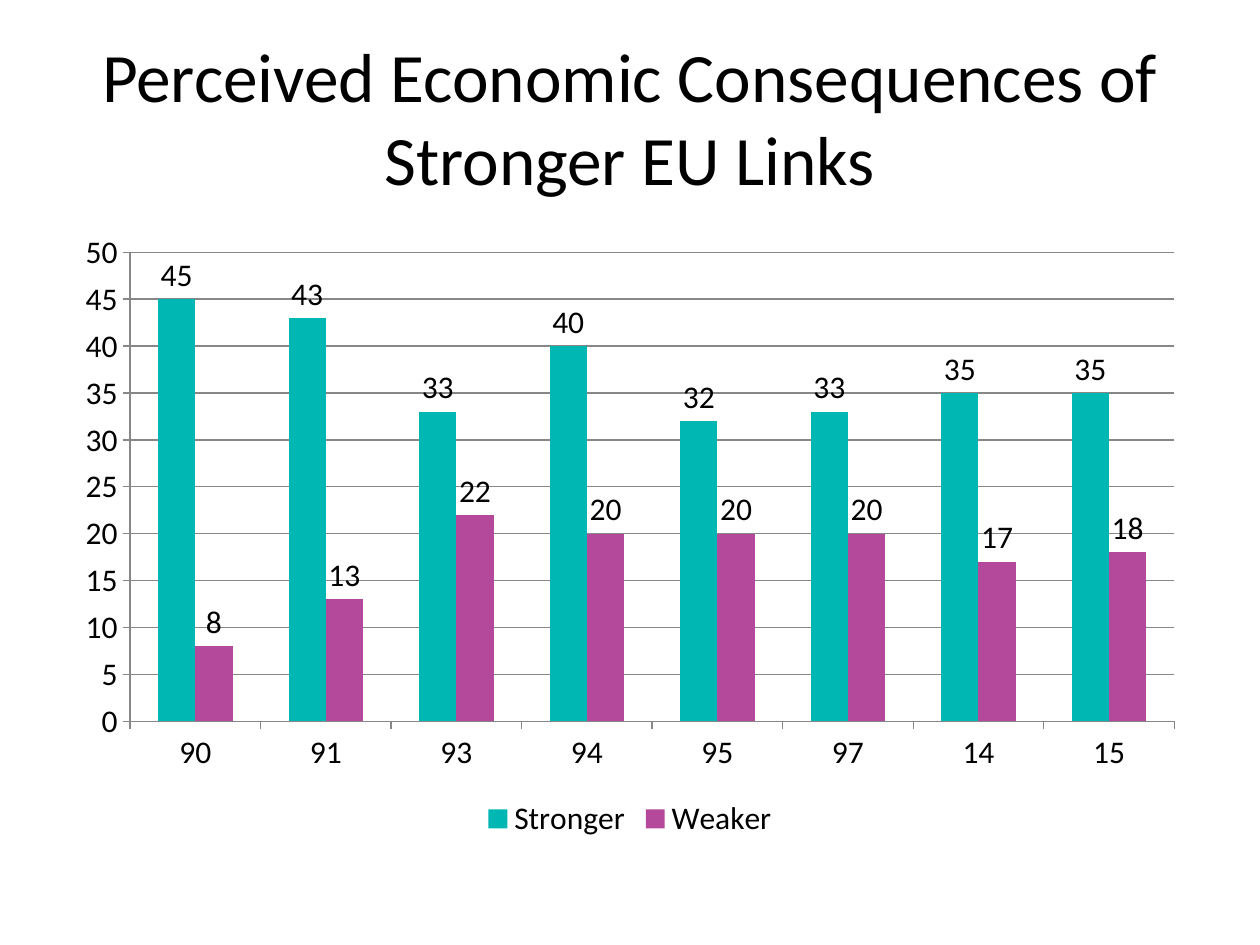
"""Build a slide with a column chart of views on stronger EU links."""
from pptx import Presentation
from pptx.chart.data import CategoryChartData
from pptx.dml.color import RGBColor
from pptx.enum import chart as ch, text as tx
from pptx.util import Cm, Pt

FONT = "Calibri"
COLORS = {"text": "000000", "grid": "878787", "Stronger": "00B7B4", "Weaker": "B4489B"}
YEARS = ["90", "91", "93", "94", "95", "97", "14", "15"]
SHARES = {
    "Stronger": [45, 43, 33, 40, 32, 33, 35, 35],
    "Weaker": [8, 13, 22, 20, 20, 20, 17, 18],
}


def color(name):
    return RGBColor.from_string(COLORS[name])


def style_font(font, size):
    font.name = FONT
    font.size = Pt(size)
    font.color.rgb = color("text")


def style_line(line):
    line.color.rgb = color("grid")
    line.width = Pt(0.75)


def set_title(slide, wording):
    title = slide.shapes.title
    title.left, title.top, title.width, title.height = Cm(1.27), Cm(0.76), Cm(22.86), Cm(3.18)
    frame = title.text_frame
    frame.text = wording
    frame.word_wrap = True
    frame.vertical_anchor = tx.MSO_ANCHOR.MIDDLE
    heading = frame.paragraphs[0]
    heading.alignment = tx.PP_ALIGN.CENTER
    style_font(heading.runs[0].font, 39.6)


def style_axes(chart):
    shares_axis = chart.value_axis
    shares_axis.minimum_scale, shares_axis.maximum_scale = 0, 50
    shares_axis.major_unit = 5
    shares_axis.has_major_gridlines = True
    style_line(shares_axis.major_gridlines.format.line)
    for axis in (chart.category_axis, shares_axis):
        axis.major_tick_mark = ch.XL_TICK_MARK.OUTSIDE
        axis.minor_tick_mark = ch.XL_TICK_MARK.NONE
        style_line(axis.format.line)


def style_columns(plot):
    plot.gap_width = 150
    plot.overlap = 0
    plot.vary_by_categories = False
    for answer in plot.series:
        answer.invert_if_negative = False
        answer.format.fill.solid()
        answer.format.fill.fore_color.rgb = color(answer.name)
        labels = answer.data_labels
        labels.show_value = True
        labels.position = ch.XL_LABEL_POSITION.OUTSIDE_END
        style_font(labels.font, 18)


def add_shares_chart(slide):
    shares = CategoryChartData()
    shares.categories = YEARS
    for answer, values in SHARES.items():
        shares.add_series(answer, values)
    chart = slide.shapes.add_chart(
        ch.XL_CHART_TYPE.COLUMN_CLUSTERED,
        Cm(1.27), Cm(4.45), Cm(22.86), Cm(12.57), shares,
    ).chart
    style_font(chart.font, 18)
    chart.has_title = False
    chart.has_legend = True
    chart.legend.position = ch.XL_LEGEND_POSITION.BOTTOM
    chart.legend.include_in_layout = False
    style_axes(chart)
    style_columns(chart.plots[0])


def main():
    deck = Presentation()
    deck.slide_width, deck.slide_height = Cm(25.4), Cm(19.05)
    slide = deck.slides.add_slide(deck.slide_layouts.get_by_name("Title Only"))
    set_title(slide, "Perceived Economic Consequences of Stronger EU Links")
    add_shares_chart(slide)
    deck.save("out.pptx")


if __name__ == "__main__":
    main()
